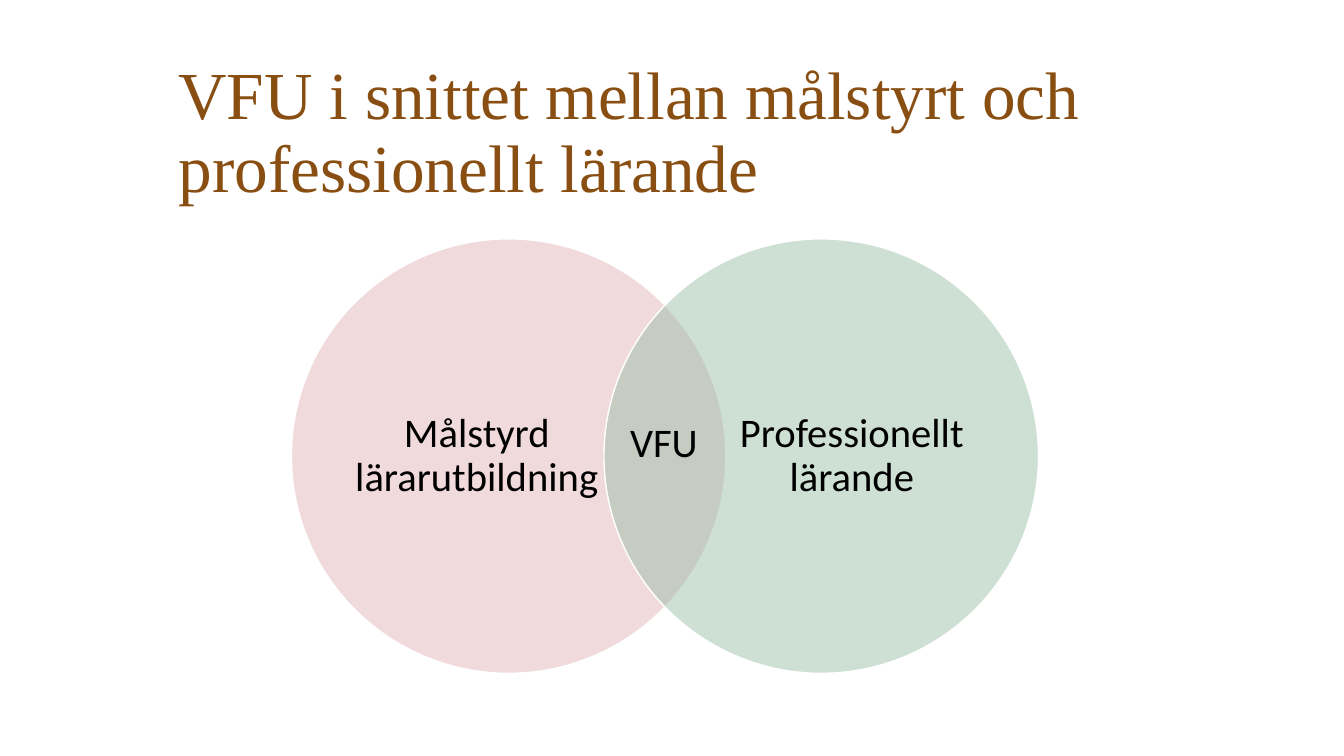
"""Build a slide with a two-circle Venn diagram on teacher training."""
from dataclasses import dataclass

import pptx
import pptx.dml.color
import pptx.enum.shapes
import pptx.enum.text
import pptx.oxml
import pptx.oxml.ns
import pptx.util

Inches = pptx.util.Inches
Align = pptx.enum.text.PP_ALIGN
Anchor = pptx.enum.text.MSO_ANCHOR

CIRCLE_TOP = 2.37
CIRCLE_SIZE = 4.31
LABEL_WIDTH = 2.48
LABEL_HEIGHT = 3.29


@dataclass
class Circle:
    """A Venn circle and the label inside it."""
    text: str
    left: float
    label_left: float
    color: str


CIRCLES = [
    Circle("Målstyrd lärarutbildning", 2.89, 3.49, "E3B6BB"),
    Circle("Professionellt lärande", 5.99, 7.21, "9EC0AA"),
]


def rgb(color: str) -> pptx.dml.color.RGBColor:
    """Turn a hex string into a colour."""
    return pptx.dml.color.RGBColor.from_string(color)


def place(shape, left: float, top: float, width: float, height: float) -> None:
    """Set position and size in inches."""
    shape.left, shape.top = Inches(left), Inches(top)
    shape.width, shape.height = Inches(width), Inches(height)


def write(shape, text: str, *, size: float = 29, font: str = "Calibri", color: str = "000000",
          align=Align.LEFT, anchor=Anchor.TOP, spacing: float = 1.0, wrap: bool = True,
          insets: tuple[float, float, float, float] = (0, 0, 0, 0)) -> None:
    """Put formatted text in a shape; insets are left, top, right, bottom."""
    frame = shape.text_frame
    frame.auto_size = pptx.enum.text.MSO_AUTO_SIZE.NONE
    frame.word_wrap = wrap
    frame.vertical_anchor = anchor
    frame.margin_left, frame.margin_top, frame.margin_right, frame.margin_bottom = map(Inches, insets)
    para = frame.paragraphs[0]
    para.alignment = align
    para.line_spacing = spacing
    para.space_before = pptx.util.Pt(0)
    span = para.add_run()
    span.text = text
    span.font.size = pptx.util.Pt(size)
    span.font.name = font
    span.font.color.rgb = rgb(color)


def draw_circle(page, circle: Circle) -> None:
    """Draw a half-transparent circle with its label."""
    shape = page.shapes.add_shape(
        pptx.enum.shapes.MSO_SHAPE.OVAL, Inches(circle.left), Inches(CIRCLE_TOP),
        Inches(CIRCLE_SIZE), Inches(CIRCLE_SIZE))
    shape.shadow.inherit = False
    shape.fill.solid()
    shape.fill.fore_color.rgb = rgb(circle.color)
    tint = shape.fill._xPr.find(".//" + pptx.oxml.ns.qn("a:srgbClr"))
    tint.append(pptx.oxml.parse_xml(
        f'<a:alpha {pptx.oxml.ns.nsdecls("a")} val="50000"/>'))
    shape.line.color.rgb = rgb("FFFFFF")
    shape.line.width = pptx.util.Pt(1)
    label_top = CIRCLE_TOP + (CIRCLE_SIZE - LABEL_HEIGHT) / 2
    label = page.shapes.add_textbox(
        Inches(circle.label_left), Inches(label_top), Inches(LABEL_WIDTH), Inches(LABEL_HEIGHT))
    write(label, circle.text, align=Align.CENTER, anchor=Anchor.MIDDLE, spacing=0.9)


def main() -> None:
    """Create and save the deck."""
    deck = pptx.Presentation()
    deck.slide_width, deck.slide_height = Inches(13.33), Inches(7.5)
    page = deck.slides.add_slide(deck.slide_layouts[5])
    title = page.shapes.title
    place(title, 1.77, 0.39, 9.65, 1.97)
    write(title, "VFU i snittet mellan målstyrt och professionellt lärande", size=48,
          font="Times New Roman", color="894E11", anchor=Anchor.BOTTOM, spacing=0.9,
          insets=(0, 0, 0, 0.31))
    for circle in CIRCLES:
        draw_circle(page, circle)
    overlap = page.shapes.add_textbox(Inches(6.15), Inches(4.09), Inches(0.88), Inches(0.59))
    write(overlap, "VFU", wrap=False, insets=(0.1, 0.05, 0.1, 0.05))
    deck.save("out.pptx")


if __name__ == "__main__":
    main()
